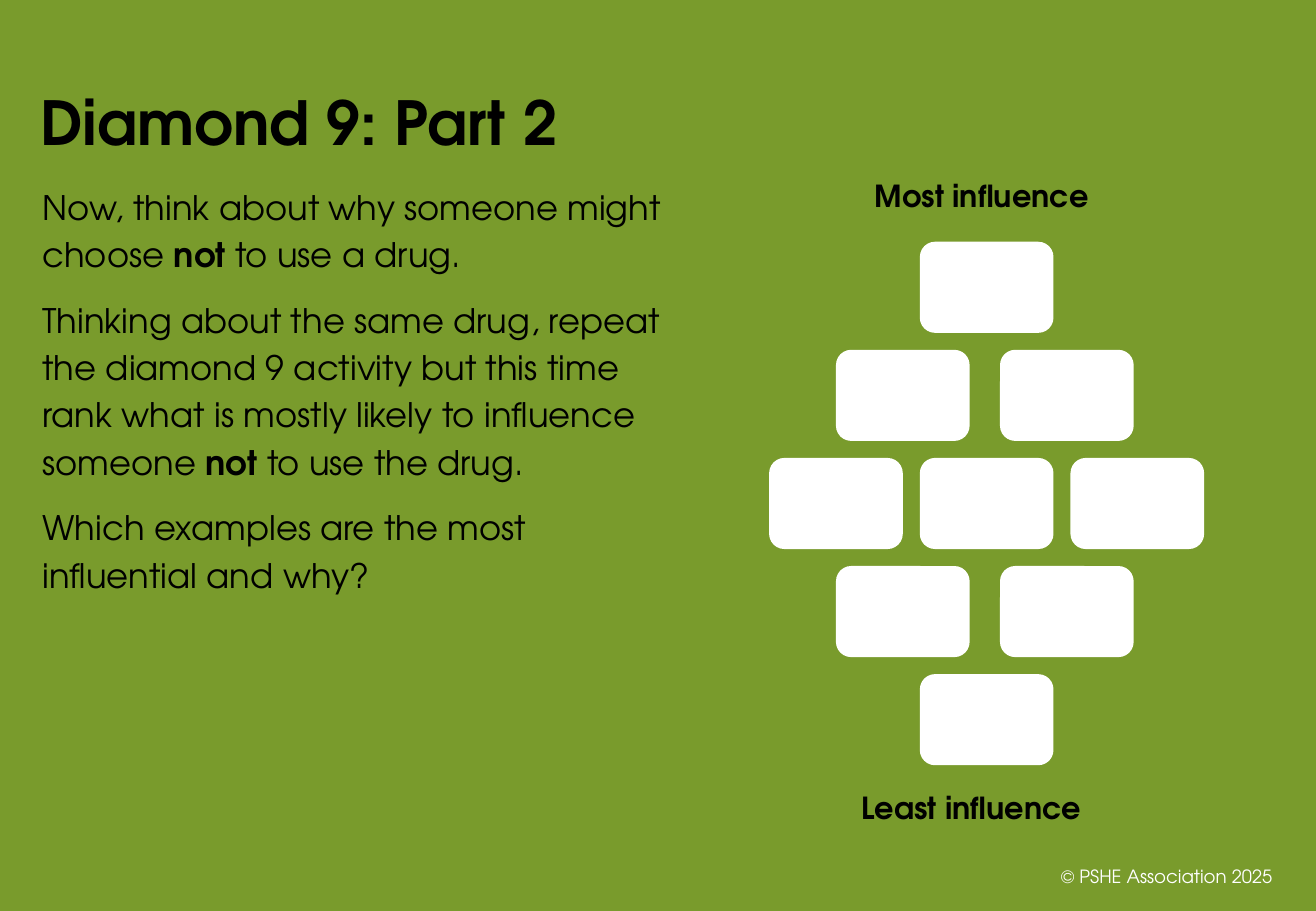
from dataclasses import dataclass

from lxml import etree
from pptx import Presentation
from pptx.dml.color import RGBColor
from pptx.enum.shapes import MSO_SHAPE
from pptx.enum.text import MSO_ANCHOR, MSO_AUTO_SIZE, PP_ALIGN
from pptx.oxml.ns import qn
from pptx.shapes.base import BaseShape
from pptx.shapes.group import GroupShape
from pptx.slide import Slide
from pptx.text.text import Font, TextFrame
from pptx.util import Inches, Pt

ROUNDED = MSO_SHAPE.ROUNDED_RECTANGLE
TOP, MIDDLE, BOTTOM = MSO_ANCHOR.TOP, MSO_ANCHOR.MIDDLE, MSO_ANCHOR.BOTTOM
LEFT, CENTER, RIGHT = PP_ALIGN.LEFT, PP_ALIGN.CENTER, PP_ALIGN.RIGHT
NO_FIT = MSO_AUTO_SIZE.NONE

FONT = "TeX Gyre Adventor"
COLORS = {"green": "799B2C", "black": "000000", "white": "FFFFFF"}

CARD_WIDTH, CARD_HEIGHT = 1.1, 0.75
DIAMOND_TOP, ROW_PITCH = 1.99, 0.89


@dataclass(frozen=True)
class Label:
    text: str
    left: float
    top: float
    width: float
    size: float
    align: PP_ALIGN
    anchor: MSO_ANCHOR = TOP
    color: str = "black"
    bold: bool = True


@dataclass(frozen=True)
class CardRow:
    left: float
    count: int
    pitch: float = 0


@dataclass(frozen=True)
class Phrase:
    text: str
    bold: bool = False


LABELS = [
    Label("Most influence", 6.35, 1.41, 3.46, 18, CENTER),
    Label("Least influence", 6.33, 6.45, 3.33, 18, CENTER),
    Label("© PSHE Association 2025", 8.13, 7.01, 2.44, 10.8, RIGHT, MIDDLE, "white", False),
]

SINGLE = CardRow(7.57, 1)
PAIR = CardRow(6.88, 2, 1.35)
TRIPLE = CardRow(6.33, 3, 1.24)
DIAMOND = [SINGLE, PAIR, TRIPLE, PAIR, SINGLE]

INSTRUCTIONS = [
    [
        Phrase("Now, think about why someone might choose "),
        Phrase("not", True),
        Phrase(" to use a drug."),
    ],
    [
        Phrase(
            "Thinking about the same drug, repeat the diamond 9 activity but this time "
            "rank what is mostly likely to influence someone "
        ),
        Phrase("not", True),
        Phrase(" to use the drug."),
    ],
    [Phrase("Which examples are the most influential and why?")],
]


def rgb(color: str) -> RGBColor:
    return RGBColor.from_string(COLORS[color])


def style_font(font: Font, size: float, bold: bool, color: str = "black") -> None:
    font.name = FONT
    font.size = Pt(size)
    font.bold = bold
    font.color.rgb = rgb(color)


def place(shape: BaseShape, left: float, top: float, width: float, height: float) -> None:
    shape.left, shape.top = Inches(left), Inches(top)
    shape.width, shape.height = Inches(width), Inches(height)


def prepare_frame(frame: TextFrame, anchor: MSO_ANCHOR) -> None:
    frame.word_wrap = True
    frame.auto_size = NO_FIT
    frame.vertical_anchor = anchor


def write_title(slide: Slide) -> None:
    title = slide.shapes.title
    place(title, 0.23, 0.59, 5.34, 0.76)
    prepare_frame(title.text_frame, BOTTOM)
    title.text_frame.text = "Diamond 9: Part 2"
    heading = title.text_frame.paragraphs[0]
    heading.alignment = LEFT
    heading.line_spacing = Pt(43)
    heading.space_before = Pt(0)
    style_font(heading.runs[0].font, 36, True)


def write_instructions(slide: Slide) -> None:
    body = slide.placeholders[1]
    place(body, 0.25, 1.43, 5.34, 4.78)
    frame = body.text_frame
    prepare_frame(frame, TOP)
    for index, phrases in enumerate(INSTRUCTIONS):
        instruction = frame.add_paragraph() if index else frame.paragraphs[0]
        properties = instruction._p.get_or_add_pPr()
        properties.set("marL", "0")
        properties.set("indent", "0")
        etree.SubElement(properties, qn("a:buNone"))
        instruction.alignment = LEFT
        instruction.line_spacing = Pt(28)
        instruction.space_before = Pt(11 if index else 0)
        for phrase in phrases:
            run = instruction.add_run()
            run.text = phrase.text
            style_font(run.font, 20, phrase.bold)


def add_label(slide: Slide, label: Label) -> None:
    box = slide.shapes.add_textbox(
        Inches(label.left), Inches(label.top), Inches(label.width), Inches(0.4)
    )
    prepare_frame(box.text_frame, label.anchor)
    box.text_frame.text = label.text
    line = box.text_frame.paragraphs[0]
    line.alignment = label.align
    style_font(line.runs[0].font, label.size, label.bold, label.color)


def add_card_row(diamond: GroupShape, row: CardRow, top: float) -> None:
    for column in range(row.count):
        card = diamond.shapes.add_shape(
            ROUNDED,
            Inches(row.left + column * row.pitch),
            Inches(top),
            Inches(CARD_WIDTH),
            Inches(CARD_HEIGHT),
        )
        card.shadow.inherit = False
        card.fill.solid()
        card.fill.fore_color.rgb = rgb("white")
        card.line.fill.background()


def main() -> None:
    presentation = Presentation()
    presentation.slide_width = Inches(10.83)
    presentation.slide_height = Inches(7.5)
    slide = presentation.slides.add_slide(presentation.slide_layouts[1])
    slide.background.fill.solid()
    slide.background.fill.fore_color.rgb = rgb("green")

    write_title(slide)
    write_instructions(slide)
    for label in LABELS:
        add_label(slide, label)
    diamond = slide.shapes.add_group_shape()
    for index, row in enumerate(DIAMOND):
        add_card_row(diamond, row, DIAMOND_TOP + index * ROW_PITCH)

    presentation.save("out.pptx")


if __name__ == "__main__":
    main()
